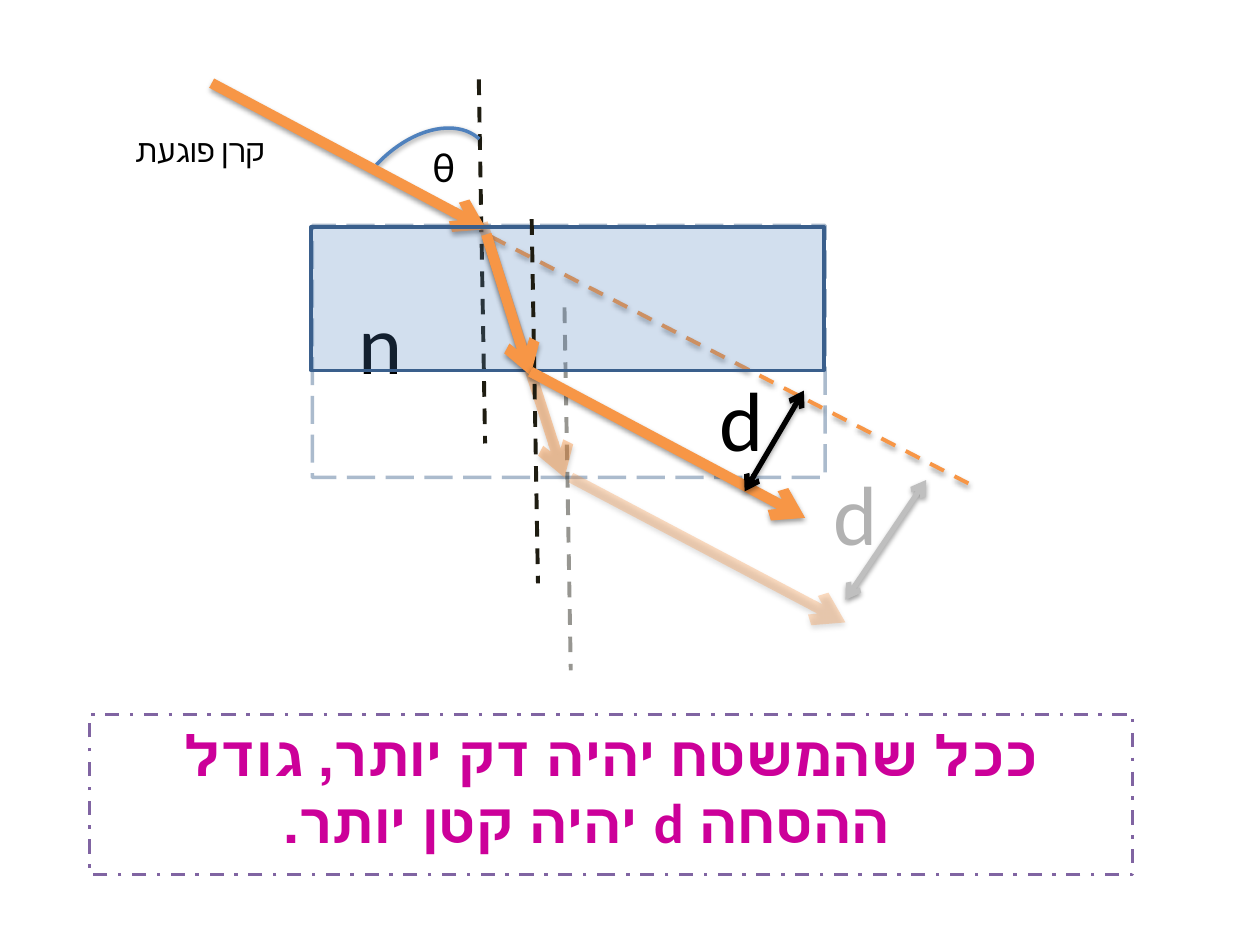
"""Build a slide on how plate thickness sets the sideways shift of a refracted ray."""
from lxml import etree
from pptx import Presentation
from pptx.dml.color import RGBColor
from pptx.enum.dml import MSO_LINE
from pptx.enum.shapes import MSO_CONNECTOR, MSO_SHAPE
from pptx.enum.text import MSO_ANCHOR, PP_ALIGN
from pptx.oxml.ns import qn
from pptx.util import Inches, Pt

DASH, LONG_DASH, DASH_DOT = MSO_LINE.DASH, MSO_LINE.LONG_DASH, MSO_LINE.DASH_DOT
RECTANGLE, ARC = MSO_SHAPE.RECTANGLE, MSO_SHAPE.ARC
STRAIGHT = MSO_CONNECTOR.STRAIGHT
RIGHT, CENTER = PP_ALIGN.RIGHT, PP_ALIGN.CENTER
TOP = MSO_ANCHOR.TOP

FONT = "Calibri"
RAY = {"color": "F79646", "width": 6, "tail": True, "shadow": True}
EXTENSION = {"color": "F79646", "width": 2.25, "dash": DASH, "shadow": True}
NORMAL = {"color": "1E1C11", "width": 2.25, "dash": DASH}
SHIFT = {"color": "000000", "width": 3, "head": True, "tail": True, "shadow": True}
THICK_PLATE = {"color": "385D8A", "width": 2, "dash": LONG_DASH, "alpha": 41}
THIN_PLATE = {"color": "3A5F8C", "width": 2, "fill": "4F81BD", "fill_alpha": 25}
ANGLE = {"color": "4F81BD", "width": 2, "shadow": True, "rotation": 312.8}
FRAME = {"color": "8064A2", "width": 2, "dash": DASH_DOT, "fill": "FFFFFF"}
LETTER = {"size": 48, "color": "000000", "complex_font": FONT}
CONCLUSION = {"size": 32, "color": "CC0099", "bold": True}

ITEMS = [
    ("shape", RECTANGLE, (2.48, 1.79, 4.07, 2), THICK_PLATE),
    ("line", (3.8, 0.63), (3.85, 3.52), NORMAL),
    ("label", "קרן פוגעת", (0.83, 0.99, 1.37, 0.42), {**LETTER, "size": 18}),
    ("label", "n", (2.6, 2.26, 0.69, 0.91), LETTER),
    ("line", (4.53, 3.79), (6.71, 4.94), {**RAY, "alpha": 33}),
    ("line", (4.48, 2.44), (4.53, 5.32), {**NORMAL, "alpha": 46}),
    ("line", (3.83, 1.77), (4.48, 3.79), {**RAY, "alpha": 45}),
    ("shape", ARC, (2.62, 1.16, 1.41, 0.92), ANGLE),
    ("line", (1.68, 0.66), (3.86, 1.82), RAY),
    ("line", (3.9, 1.88), (7.75, 3.87), EXTENSION),
    ("line", (6.71, 4.76), (7.35, 3.81), {**SHIFT, "color": "BFBFBF"}),
    ("label", "d", (6.37, 3.61, 0.69, 0.91), {**LETTER, "color": "B2B2B2"}),
    ("conclusion", "ככל שהמשטח יהיה דק יותר, גודל ההסחה d יהיה קטן יותר.",
     (0.71, 5.67, 8.28, 1.27), FRAME),
    ("shape", RECTANGLE, (2.47, 1.8, 4.07, 1.14), THIN_PLATE),
    ("label", "d", (5.47, 2.87, 0.69, 0.91), LETTER),
    ("line", (4.22, 1.74), (4.27, 4.63), NORMAL),
    ("line", (3.86, 1.86), (4.21, 2.98), RAY),
    ("line", (4.21, 2.95), (6.39, 4.11), RAY),
    ("label", "θ", (3.15, 1.07, 0.56, 0.5), {**LETTER, "size": 24}),
    ("line", (5.91, 3.9), (6.38, 3.1), SHIFT),
]


def rgb(color):
    return RGBColor.from_string(color)


def add_child(parent, tag, **attributes):
    child = etree.SubElement(parent, qn(tag))
    for name, value in attributes.items():
        child.set(name, str(value))
    return child


def set_alpha(parent, percent):
    color = parent.find(qn("a:solidFill"))[0]
    add_child(color, "a:alpha", val=percent * 1000)


def format_outline(shape, style):
    line = shape.line
    line.color.rgb = rgb(style["color"])
    line.width = Pt(style["width"])
    if "dash" in style:
        line.dash_style = style["dash"]
    properties = shape._element.spPr
    outline = properties.find(qn("a:ln"))
    if "alpha" in style:
        set_alpha(outline, style["alpha"])
    for end in ("head", "tail"):
        if style.get(end):
            add_child(outline, f"a:{end}End", type="arrow")
    effects = add_child(properties, "a:effectLst")
    if style.get("shadow"):
        shadow = add_child(effects, "a:outerShdw", blurRad=Pt(3.1), dist=Pt(1.6),
                           dir=90 * 60000, rotWithShape=0)
        color = add_child(shadow, "a:srgbClr", val="000000")
        add_child(color, "a:alpha", val=38000)


def add_line(slide, start, end, style):
    points = [Inches(value) for value in (*start, *end)]
    format_outline(slide.shapes.add_connector(STRAIGHT, *points), style)


def add_outline(slide, preset, box, style):
    shape = slide.shapes.add_shape(preset, *map(Inches, box))
    shape.rotation = style.get("rotation", 0)
    if "fill" in style:
        shape.fill.solid()
        shape.fill.fore_color.rgb = rgb(style["fill"])
    else:
        shape.fill.background()
    if "fill_alpha" in style:
        set_alpha(shape._element.spPr, style["fill_alpha"])
    format_outline(shape, style)
    return shape


def write(shape, text, style, alignment):
    frame = shape.text_frame
    frame.word_wrap = True
    frame.vertical_anchor = TOP
    paragraph = frame.paragraphs[0]
    paragraph.alignment = alignment
    properties = paragraph._p.get_or_add_pPr()
    properties.set("rtl", "1")
    run = paragraph.add_run()
    run.text = text
    values = {"name": FONT, "size": Pt(style["size"]), "bold": style.get("bold", False)}
    for name, value in values.items():
        setattr(run.font, name, value)
    run.font.color.rgb = rgb(style["color"])
    if "complex_font" in style:
        add_child(run._r.get_or_add_rPr(), "a:cs", typeface=style["complex_font"])
    return properties


def add_label(slide, text, box, style):
    write(slide.shapes.add_textbox(*map(Inches, box)), text, style, RIGHT)


def add_conclusion(slide, text, box, style):
    shape = add_outline(slide, RECTANGLE, box, style)
    properties = write(shape, text, CONCLUSION, CENTER)
    properties.set("marL", str(Inches(0.38)))
    properties.set("indent", str(Inches(-0.38)))
    spacing = add_child(properties, "a:spcBef")
    add_child(spacing, "a:spcPct", val=20000)


def main():
    presentation = Presentation()
    presentation.slide_width, presentation.slide_height = Inches(10), Inches(7.5)
    slide = presentation.slides.add_slide(presentation.slide_layouts[6])
    builders = {"shape": add_outline, "line": add_line,
                "label": add_label, "conclusion": add_conclusion}
    for kind, *details in ITEMS:
        builders[kind](slide, *details)
    presentation.save("out.pptx")


if __name__ == "__main__":
    main()
